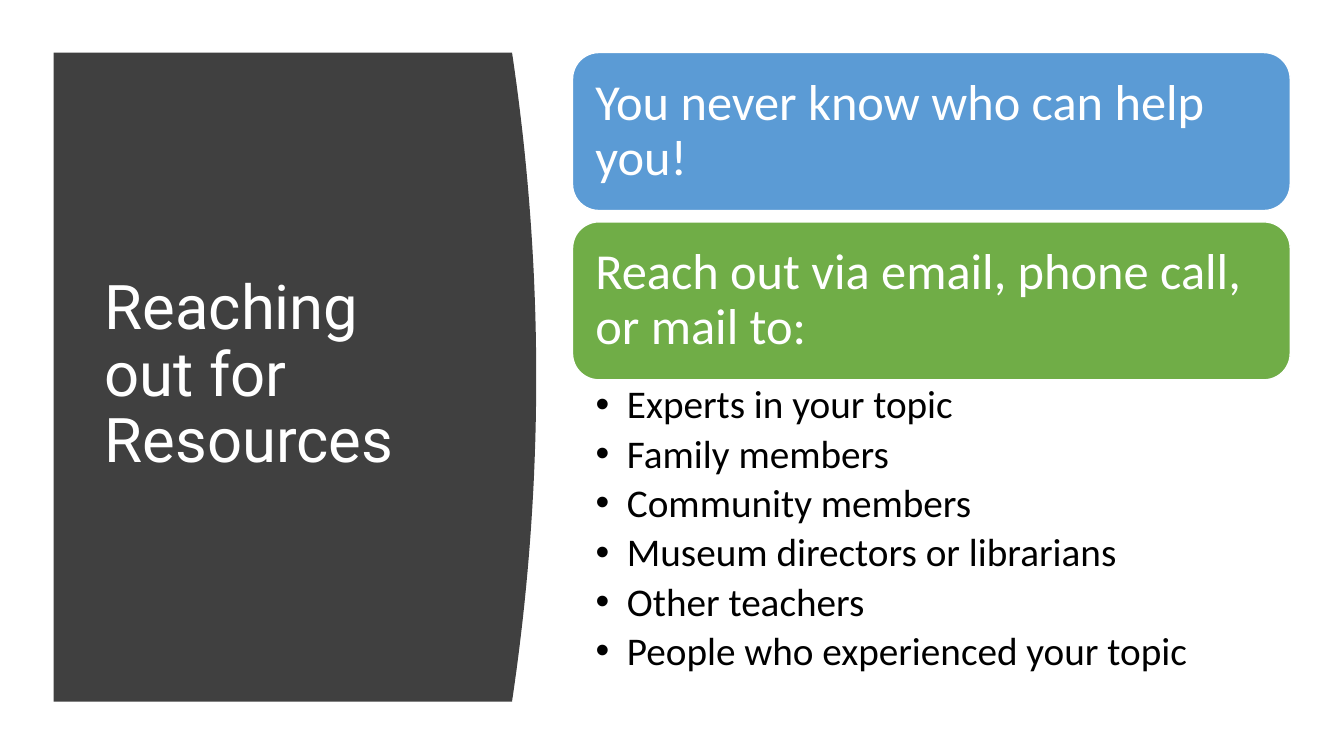
from dataclasses import dataclass

from lxml import etree
from pptx import Presentation
from pptx.dml.color import RGBColor
from pptx.enum.shapes import MSO_SHAPE
from pptx.enum.text import MSO_ANCHOR, MSO_AUTO_SIZE, PP_ALIGN
from pptx.oxml.ns import qn
from pptx.util import Inches, Pt

ROUNDED = MSO_SHAPE.ROUNDED_RECTANGLE
MIDDLE, TOP = MSO_ANCHOR.MIDDLE, MSO_ANCHOR.TOP
LEFT = PP_ALIGN.LEFT
NO_AUTOFIT = MSO_AUTO_SIZE.NONE
TITLE_AND_CONTENT = 1


@dataclass(frozen=True)
class Theme:
    panel: str = "404040"
    light: str = "FFFFFF"
    dark: str = "000000"
    blue: str = "5B9BD5"
    green: str = "70AD47"
    title_font: str = "Roboto"
    body_font: str = "Calibri"
    title_size: int = 44
    card_size: int = 36
    list_size: int = 28
    line_spacing: float = 0.9


class SlideBuilder:
    """Places elements on a grid of 100 columns by 100 rows."""

    def __init__(self, presentation, theme):
        self.theme = theme
        self.column = presentation.slide_width / 100
        self.row = presentation.slide_height / 100
        layout = presentation.slide_layouts[TITLE_AND_CONTENT]
        self.slide = presentation.slides.add_slide(layout)

    def box(self, left, top, width, height):
        return (round(left * self.column), round(top * self.row),
                round(width * self.column), round(height * self.row))

    def place(self, placeholder, area):
        """Move a placeholder into an area and in front of earlier shapes."""
        (placeholder.left, placeholder.top,
         placeholder.width, placeholder.height) = self.box(*area)
        self.slide.shapes._spTree.append(placeholder._element)
        return placeholder.text_frame

    def prepare(self, frame, anchor, insets):
        frame.word_wrap = True
        frame.auto_size = NO_AUTOFIT
        frame.vertical_anchor = anchor
        (frame.margin_left, frame.margin_top,
         frame.margin_right, frame.margin_bottom) = map(Inches, insets)

    def add_text(self, paragraph, text, font, size, color, space_after=0):
        paragraph.alignment = LEFT
        paragraph.line_spacing = self.theme.line_spacing
        paragraph.space_before = Pt(0)
        paragraph.space_after = Pt(space_after)
        run = paragraph.add_run()
        run.text = text
        run.font.name = font
        run.font.size = Pt(size)
        run.font.color.rgb = RGBColor.from_string(color)

    def curved_panel(self, left, top, width, height, bulge, steps=40):
        """Draw a panel whose right side bows outward as a parabola."""
        right, bottom = left + width, top + height
        curve = []
        for step in range(steps + 1):
            share = step / steps
            column = right - bulge * (2 * share - 1) ** 2
            curve.append((column, top + height * share))
        points = [(round(x * self.column), round(y * self.row))
                  for x, y in [*curve, (left, bottom)]]
        outline = self.slide.shapes.build_freeform(
            round(left * self.column), round(top * self.row))
        outline.add_line_segments(points, close=True)
        panel = outline.convert_to_shape()
        panel.shadow.inherit = False
        panel.fill.solid()
        panel.fill.fore_color.rgb = RGBColor.from_string(self.theme.panel)
        panel.line.fill.background()

    def title(self, text, area):
        frame = self.place(self.slide.shapes.title, area)
        self.prepare(frame, MIDDLE, (0.1, 0.05, 0.1, 0.05))
        self.add_text(frame.paragraphs[0], text, self.theme.title_font,
                      self.theme.title_size, self.theme.light)

    def card(self, text, color, area):
        card = self.slide.shapes.add_shape(ROUNDED, *self.box(*area))
        card.shadow.inherit = False
        card.fill.solid()
        card.fill.fore_color.rgb = RGBColor.from_string(color)
        card.line.color.rgb = RGBColor.from_string(self.theme.light)
        card.line.width = Pt(1)
        self.prepare(card.text_frame, MIDDLE, (0.15,) * 4)
        self.add_text(card.text_frame.paragraphs[0], text,
                      self.theme.body_font, self.theme.card_size,
                      self.theme.light)

    def bullet_list(self, items, area):
        frame = self.place(self.slide.placeholders[1], area)
        self.prepare(frame, TOP, (0.23, 0.05, 0.28, 0.05))
        for index, item in enumerate(items):
            paragraph = frame.add_paragraph() if index else frame.paragraphs[0]
            self.add_text(paragraph, item, self.theme.body_font,
                          self.theme.list_size, self.theme.dark, space_after=5)
            properties = paragraph._p.get_or_add_pPr()
            properties.set("marL", str(Inches(0.31)))
            properties.set("indent", str(-Inches(0.31)))
            etree.SubElement(properties, qn("a:buChar")).set("char", "•")


def main():
    presentation = Presentation()
    presentation.slide_width = Inches(13.33)
    presentation.slide_height = Inches(7.5)
    theme = Theme()
    builder = SlideBuilder(presentation, theme)

    top = 6.95
    builder.curved_panel(4, top, 35.9, 85.85, bulge=1.8)
    builder.title("Reaching out for Resources", (7.05, 14.8, 28.05, 69.9))

    card_left, card_width, card_height, card_pitch = 42.6, 53.4, 20.9, 22.4
    cards = [
        ("You never know who can help you!", theme.blue),
        ("Reach out via email, phone call, or mail to:", theme.green),
    ]
    for index, (text, color) in enumerate(cards):
        builder.card(text, color, (card_left, top + index * card_pitch,
                                   card_width, card_height))

    list_top = top + card_pitch + card_height
    builder.bullet_list([
        "Experts in your topic",
        "Family members",
        "Community members",
        "Museum directors or librarians",
        "Other teachers",
        "People who experienced your topic",
    ], (card_left, list_top, card_width, 42.4))

    presentation.save("out.pptx")


if __name__ == "__main__":
    main()
